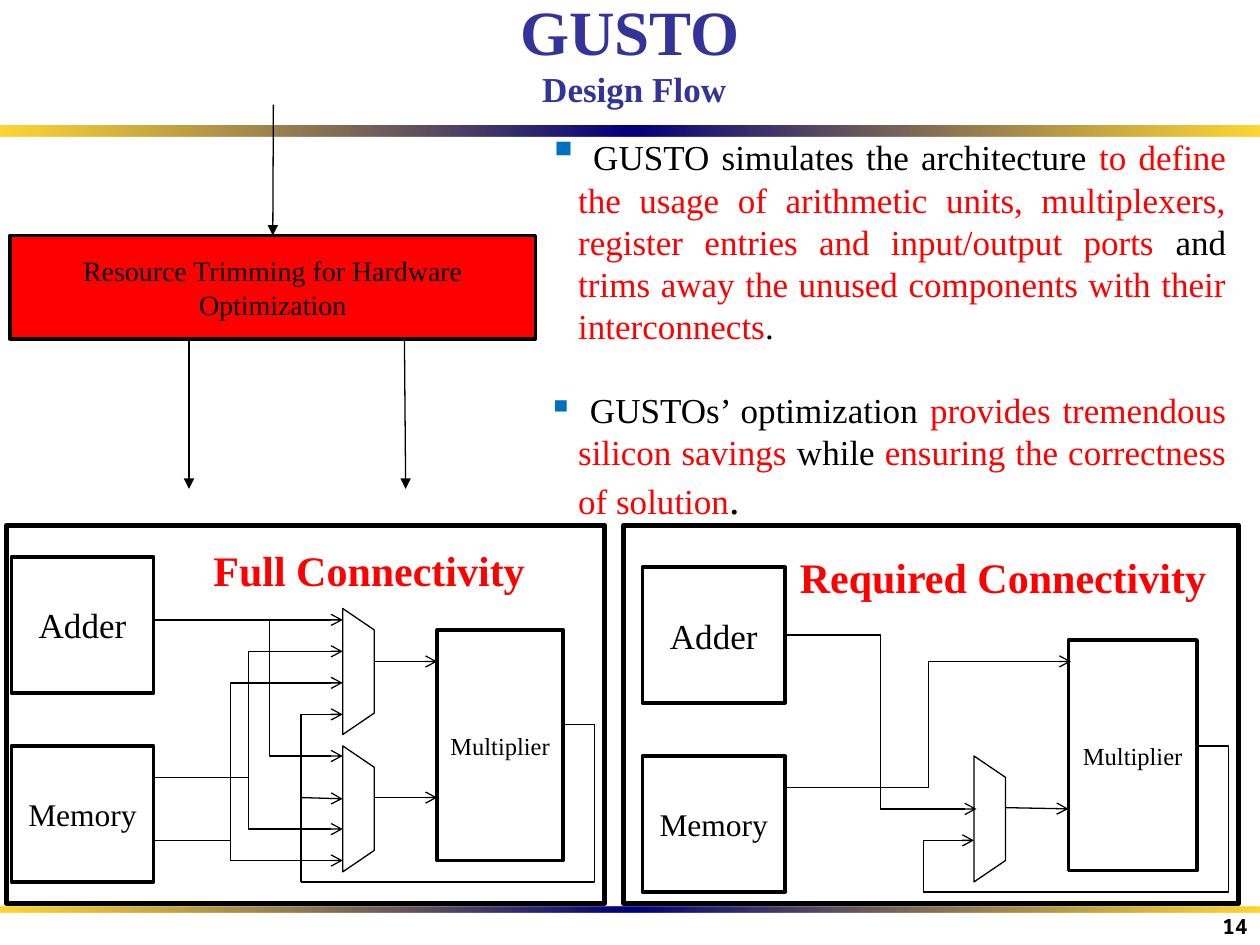
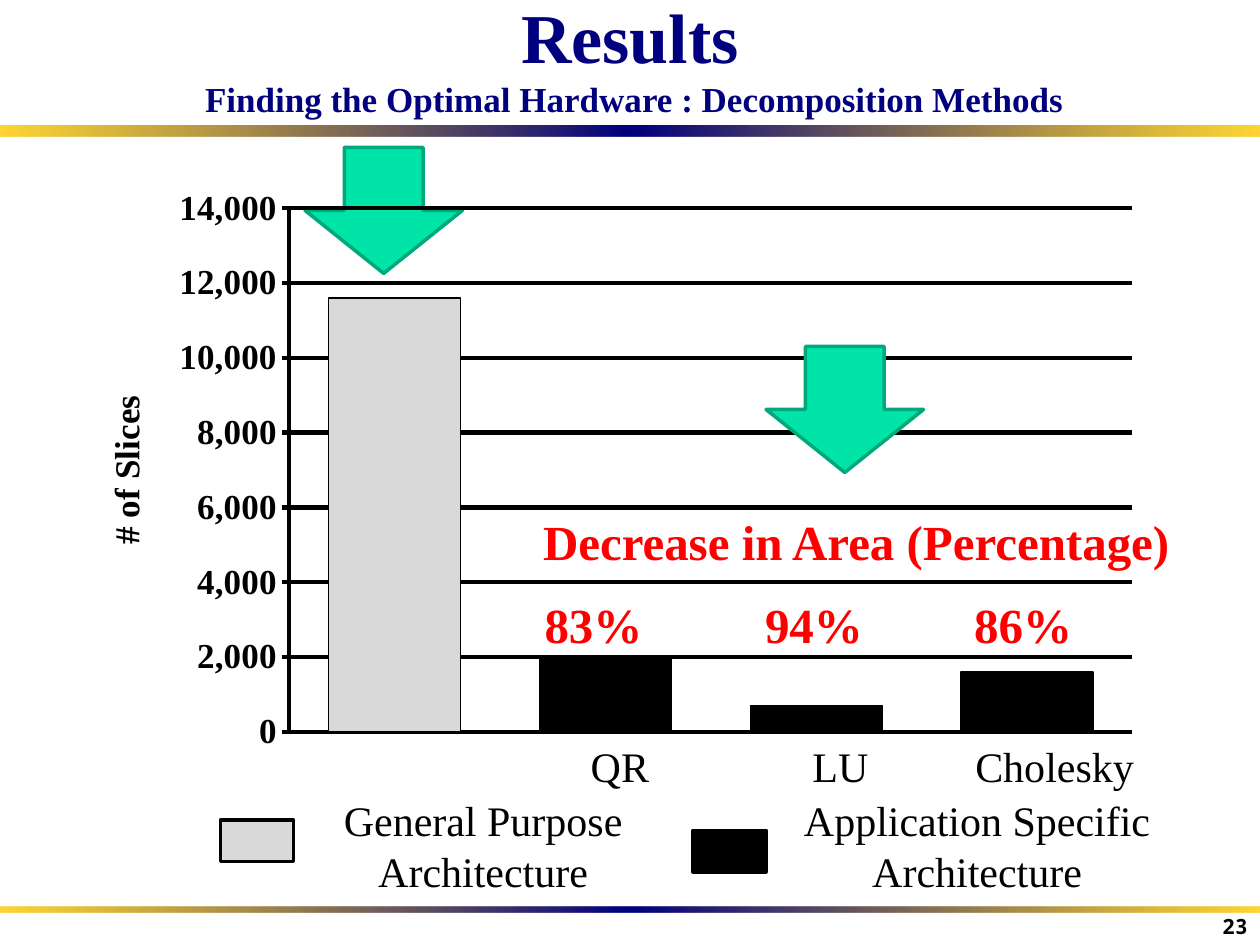
from dataclasses import dataclass

from lxml import etree
from pptx import Presentation
from pptx import util as u
from pptx.chart.data import CategoryChartData
from pptx.dml.color import RGBColor
from pptx.enum import chart as charts, shapes, text
from pptx.oxml import ns, parse_xml


@dataclass(frozen=True)
class Theme:
    font: str = "Times New Roman"
    number_font: str = "Noto Sans Mono"
    black: str = "000000"
    white: str = "FFFFFF"
    red: str = "FF0000"
    gold: str = "FFCC00"
    navy: str = "00007F"
    indigo: str = "333399"
    bullet: str = "0070C0"
    gray: str = "D9D9D9"
    mint: str = "00E4A8"
    green: str = "00A97C"
    body: int = 20
    large: int = 24
    callout: int = 28
    box: int = 16
    thin: float = 0.75
    border: float = 2
    axis: float = 2.5
    frame: float = 3


THEME = Theme()
RED = {"color": THEME.red}
BIG = {"size": THEME.large}

BANDS = [(0, 1, 10, 0.08), (0, 7.2, 10, 0.04)]
NUMBER_BOX = (7.92, 7.17, 2.08, 0.33)

FLOW_TITLE = dict(heading="GUSTO", subtitle=" Design Flow", top=0.15,
                  size=36, color=THEME.indigo, number="14")
FLOW_BULLETS = [
    [(" ", BIG), ("GUSTO simulates the architecture ", {}),
     ("to define the usage of arithmetic units, multiplexers, register entries "
      "and input/output ports", RED), (" and ", {}),
     ("trims away the unused components with their interconnects", RED), (".", {})],
    [(" GUSTOs’ optimization ", {}), ("provides tremendous silicon savings ", RED),
     ("while ", {}), ("ensuring the correctness of solution", RED), (".", BIG)],
]
TRIMMING = ("Resource Trimming for Hardware Optimization", (0.08, 1.87, 4.17, 0.82))
TRIMMING_OUTPUTS = [((1.5, 2.7), (1.5, 3.88)), ((3.21, 2.7), (3.22, 3.88))]

PANELS = [
    dict(
        title="Full Connectivity", title_box=(1.53, 4.27, 2.8, 0.5),
        frame=(0.05, 4.17, 4.75, 3),
        units=[("Multiplier", (3.47, 5, 1, 1.83), 14),
               ("Adder", (0.09, 4.42, 1.13, 1.08), 20),
               ("Memory", (0.09, 5.92, 1.13, 1.08), 18)],
        multiplexers=[(2.72, 4.83), (2.72, 5.92)],
        arrows=[((2.97, 5.25), (3.47, 5.25), None),
                ((2.97, 6.33), (3.47, 6.33), None),
                ((2.39, 5.67), (2.72, 5.67), None),
                ((2.39, 6.33), (2.72, 6.34), None),
                ((1.22, 4.92), (2.72, 4.92), None),
                ((1.22, 6.17), (2.72, 5.17), 1.97),
                ((1.22, 6.67), (2.72, 5.42), 1.83),
                ((1.8, 6.67), (2.72, 6.83), 1.83),
                ((1.97, 6.17), (2.72, 6.58), 1.97),
                ((1.55, 4.92), (2.72, 6), 2.14)],
        feedback=[((4.47, 5.75), (2.39, 7), 4.72), ((2.39, 5.67), (2.39, 7), None)],
    ),
    dict(
        title="Required Connectivity", title_box=(6.17, 4.33, 3.58, 0.5),
        frame=(4.95, 4.17, 4.88, 3),
        units=[("Multiplier", (8.48, 5.08, 1.02, 1.83), 14),
               ("Adder", (5.1, 4.5, 1.13, 1.08), 20),
               ("Memory", (5.1, 6, 1.13, 1.08), 18)],
        multiplexers=[(7.73, 6)],
        arrows=[((7.98, 6.41), (8.48, 6.42), None),
                ((7.33, 6.67), (7.73, 6.67), None),
                ((6.23, 6.25), (8.5, 5.25), 7.37),
                ((6.23, 5.04), (7.75, 6.42), 6.99)],
        feedback=[((9.5, 5.92), (7.33, 7.08), 9.75), ((7.33, 7.08), (7.33, 6.67), None)],
    ),
]

RESULTS_TITLE = dict(heading="Results", top=0.23, size=40, color=THEME.navy, number="23",
                     subtitle=" Finding the Optimal Hardware : Decomposition Methods")
SLICES = [("1", 11600, THEME.gray), ("2", 2000, THEME.black),
          ("3", 700, THEME.black), ("4", 1600, THEME.black)]
CHART_BOX = (0.58, 1.42, 8.58, 4.67)
PLOT_AREA = dict(x=0.2, y=0.05, w=0.78, h=0.89)
GENERAL_ARROW = (2.42, 1.17, 1.25, 1)
SPECIFIC_ARROW = (6.08, 2.75, 1.25, 1)
LEGEND = [("General Purpose Architecture", THEME.gray, (1.75, 6.51, 0.58, 0.33), 2),
          ("Application Specific Architecture", THEME.black, (5.5, 6.59, 0.58, 0.33), 5.92)]
METHODS = [("QR", 4.42, 1), ("LU", 6.17, 1), ("Cholesky", 7.58, 1.58)]
AREA_HEADING = ("Decrease in Area (Percentage)", (4.17, 4.01, 5.25, 0.57))
DECREASES = [("83%", 4.17), ("94%", 5.92), ("86%", 7.58)]


def rgb(color):
    return RGBColor.from_string(color)


def inches(values):
    return [u.Inches(value) for value in values]


def set_font(font, size, color, bold=False, name=THEME.font):
    font.name, font.size, font.bold = name, u.Pt(size), bold
    font.color.rgb = rgb(color)


def write(shape, content, size=THEME.body, color=THEME.black, bold=False, font=THEME.font,
          align="CENTER", anchor="TOP", bullet=False, gap=0):
    frame = shape.text_frame
    frame.word_wrap = True
    frame.vertical_anchor = getattr(text.MSO_ANCHOR, anchor)
    paragraphs = [[(content, {})]] if isinstance(content, str) else content
    for index, runs in enumerate(paragraphs):
        paragraph = frame.add_paragraph() if index else frame.paragraphs[0]
        paragraph.alignment = getattr(text.PP_ALIGN, align)
        if index:
            paragraph.space_before = u.Pt(gap)
        if bullet:
            add_bullet(paragraph)
        for words, changes in runs:
            if words == "\n":
                paragraph.add_line_break()
                continue
            run = paragraph.add_run()
            run.text = words
            set_font(run.font, changes.get("size", size), changes.get("color", color),
                     bold, font)


def add_bullet(paragraph):
    properties = paragraph._p.get_or_add_pPr()
    indent = u.Inches(0.24)
    properties.set("marL", str(indent))
    properties.set("indent", str(-indent))
    color = etree.SubElement(properties, ns.qn("a:buClr"))
    etree.SubElement(color, ns.qn("a:srgbClr"), val=THEME.bullet)
    etree.SubElement(properties, ns.qn("a:buChar"), char="▪")


def add_text(slide, box, content, **style):
    shape = slide.shapes.add_textbox(*inches(box))
    write(shape, content, **style)
    return shape


def paint(shape, fill=None, line=None, width=THEME.border):
    shape.shadow.inherit = False
    if fill:
        shape.fill.solid()
        shape.fill.fore_color.rgb = rgb(fill)
    else:
        shape.fill.background()
    if line:
        shape.line.color.rgb = rgb(line)
        shape.line.width = u.Pt(width)
    else:
        shape.line.fill.background()


def add_box(slide, box, kind="RECTANGLE", **look):
    shape = slide.shapes.add_shape(getattr(shapes.MSO_SHAPE, kind), *inches(box))
    paint(shape, **look)
    return shape


def add_band(slide, box):
    band = add_box(slide, box)
    band.fill.gradient()
    band.fill.gradient_angle = 0
    stops = next(band.element.iter(ns.qn("a:gsLst")))
    for stop in list(stops):
        stops.remove(stop)
    for place, color, alpha in [(0, THEME.gold, 80), (50, THEME.navy, 100), (100, THEME.gold, 80)]:
        stop = etree.SubElement(stops, ns.qn("a:gs"), pos=str(place * 1000))
        shade = etree.SubElement(stop, ns.qn("a:srgbClr"), val=color)
        etree.SubElement(shade, ns.qn("a:alpha"), val=str(alpha * 1000))


def add_wire(slide, start, end, bend=None, head=None):
    kind = shapes.MSO_CONNECTOR.STRAIGHT if bend is None else shapes.MSO_CONNECTOR.ELBOW
    wire = slide.shapes.add_connector(kind, *inches(start + end))
    wire.line.color.rgb = rgb(THEME.black)
    wire.line.width = u.Pt(THEME.thin)
    properties = wire.element.spPr
    if bend is not None:
        ratio = (bend - start[0]) / (end[0] - start[0])
        guides = next(properties.iter(ns.qn("a:avLst")))
        etree.SubElement(guides, ns.qn("a:gd"), name="adj1", fmla=f"val {round(ratio * 100000)}")
    if head:
        etree.SubElement(properties.find(ns.qn("a:ln")), ns.qn("a:tailEnd"), type=head)
    etree.SubElement(properties, ns.qn("a:effectLst"))
    return wire


def add_multiplexer(slide, left, top, width=0.25, height=1, slant=0.17):
    right, bottom = left + width, top + height
    builder = slide.shapes.build_freeform(*inches((left, top)))
    corners = [(right, top + slant), (right, bottom - slant), (left, bottom)]
    builder.add_line_segments([inches(corner) for corner in corners], close=True)
    paint(builder.convert_to_shape(), line=THEME.black, width=THEME.thin)


def add_slide(presentation, heading, subtitle, top, size, color, number):
    slide = presentation.slides.add_slide(presentation.slide_layouts[6])
    for band in BANDS:
        add_band(slide, band)
    lines = [[(heading, {}), ("\n", {}), (subtitle, {"size": THEME.body})]]
    add_text(slide, (0.25, top, 9.5, 0.77), lines, size=size, color=color,
             bold=True, anchor="BOTTOM")
    add_text(slide, NUMBER_BOX, number, size=12, bold=True, font=THEME.number_font,
             align="RIGHT", anchor="BOTTOM")
    return slide


def add_panel(slide, panel):
    for multiplexer in panel["multiplexers"]:
        add_multiplexer(slide, *multiplexer)
    for name, box, size in panel["units"]:
        unit = add_box(slide, box, fill=THEME.white, line=THEME.black)
        write(unit, name, size=size, anchor="MIDDLE")
    for wire in panel["arrows"]:
        add_wire(slide, *wire, head="arrow")
    for wire in panel["feedback"]:
        add_wire(slide, *wire)
    add_text(slide, panel["title_box"], panel["title"], size=THEME.large,
             color=THEME.red, bold=True)
    add_box(slide, panel["frame"], line=THEME.black, width=THEME.frame)


def build_flow(presentation):
    slide = add_slide(presentation, **FLOW_TITLE)
    label, box = TRIMMING
    trimming = add_box(slide, box, fill=THEME.red, line=THEME.black)
    write(trimming, label, size=THEME.box, anchor="MIDDLE")
    add_wire(slide, (2.17, 0.83), (2.17, 1.87), head="triangle").end_connect(trimming, 0)
    for start, end in TRIMMING_OUTPUTS:
        add_wire(slide, start, end, head="triangle")
    add_text(slide, (4.25, 0.97, 5.58, 3.26), FLOW_BULLETS, align="JUSTIFY",
             bullet=True, gap=24)
    for panel in PANELS:
        add_panel(slide, panel)


def add_slices_chart(slide):
    data = CategoryChartData()
    data.categories = [name for name, _, _ in SLICES]
    data.add_series("Series 1", [value for _, value, _ in SLICES])
    chart = slide.shapes.add_chart(charts.XL_CHART_TYPE.COLUMN_CLUSTERED,
                                   *inches(CHART_BOX), data).chart
    chart.has_legend = chart.has_title = False
    set_font(chart.font, THEME.body, THEME.black, bold=True)
    plot = chart.plots[0]
    plot.gap_width, plot.overlap, plot.vary_by_categories = 60, 100, False
    for index, (_, _, color) in enumerate(SLICES):
        look = plot.series[0].points[index].format
        look.fill.solid()
        look.fill.fore_color.rgb = rgb(color)
        look.line.color.rgb = rgb(THEME.black)
        look.line.width = u.Pt(THEME.thin)
    chart.category_axis.visible = False
    axis = chart.value_axis
    axis.minimum_scale, axis.maximum_scale, axis.major_unit = 0, 14000, 2000
    axis.major_tick_mark = charts.XL_TICK_MARK.CROSS
    axis.tick_labels.number_format = "#,##0"
    axis.tick_labels.number_format_is_linked = False
    for line in (axis.format.line, axis.major_gridlines.format.line):
        line.color.rgb = rgb(THEME.black)
        line.width = u.Pt(THEME.axis)
    axis.axis_title.text_frame.text = "# of Slices"
    set_font(axis.axis_title.text_frame.paragraphs[0].runs[0].font,
             THEME.body, THEME.black, bold=True)
    area = next(chart.element.iter(ns.qn("c:plotArea")))
    for layout in area.findall(ns.qn("c:layout")):
        area.remove(layout)
    sizes = "".join(f'<c:{key} val="{value}"/>' for key, value in PLOT_AREA.items())
    area.insert(0, parse_xml(
        f'<c:layout {ns.nsdecls("c")}><c:manualLayout><c:layoutTarget val="inner"/>'
        f'<c:xMode val="edge"/><c:yMode val="edge"/>{sizes}</c:manualLayout></c:layout>'))


def build_results(presentation):
    slide = add_slide(presentation, **RESULTS_TITLE)
    arrow_look = dict(kind="DOWN_ARROW", fill=THEME.mint, line=THEME.green)
    add_box(slide, GENERAL_ARROW, **arrow_look)
    add_slices_chart(slide)
    for label, color, swatch, left in LEGEND:
        add_box(slide, swatch, fill=color, line=THEME.black)
        add_text(slide, (left, 6.26, 3.67, 0.91), label, size=THEME.large)
    for method, left, width in METHODS:
        add_text(slide, (left, 5.83, width, 0.5), method, size=THEME.large)
    callout = dict(size=THEME.callout, color=THEME.red, bold=True)
    heading, box = AREA_HEADING
    add_text(slide, box, heading, **callout)
    for percentage, left in DECREASES:
        add_text(slide, (left, 4.67, 1.08, 0.57), percentage, **callout)
    add_box(slide, SPECIFIC_ARROW, **arrow_look)


def main():
    presentation = Presentation()
    presentation.slide_width, presentation.slide_height = inches((10, 7.5))
    build_flow(presentation)
    build_results(presentation)
    presentation.save("out.pptx")


if __name__ == "__main__":
    main()
